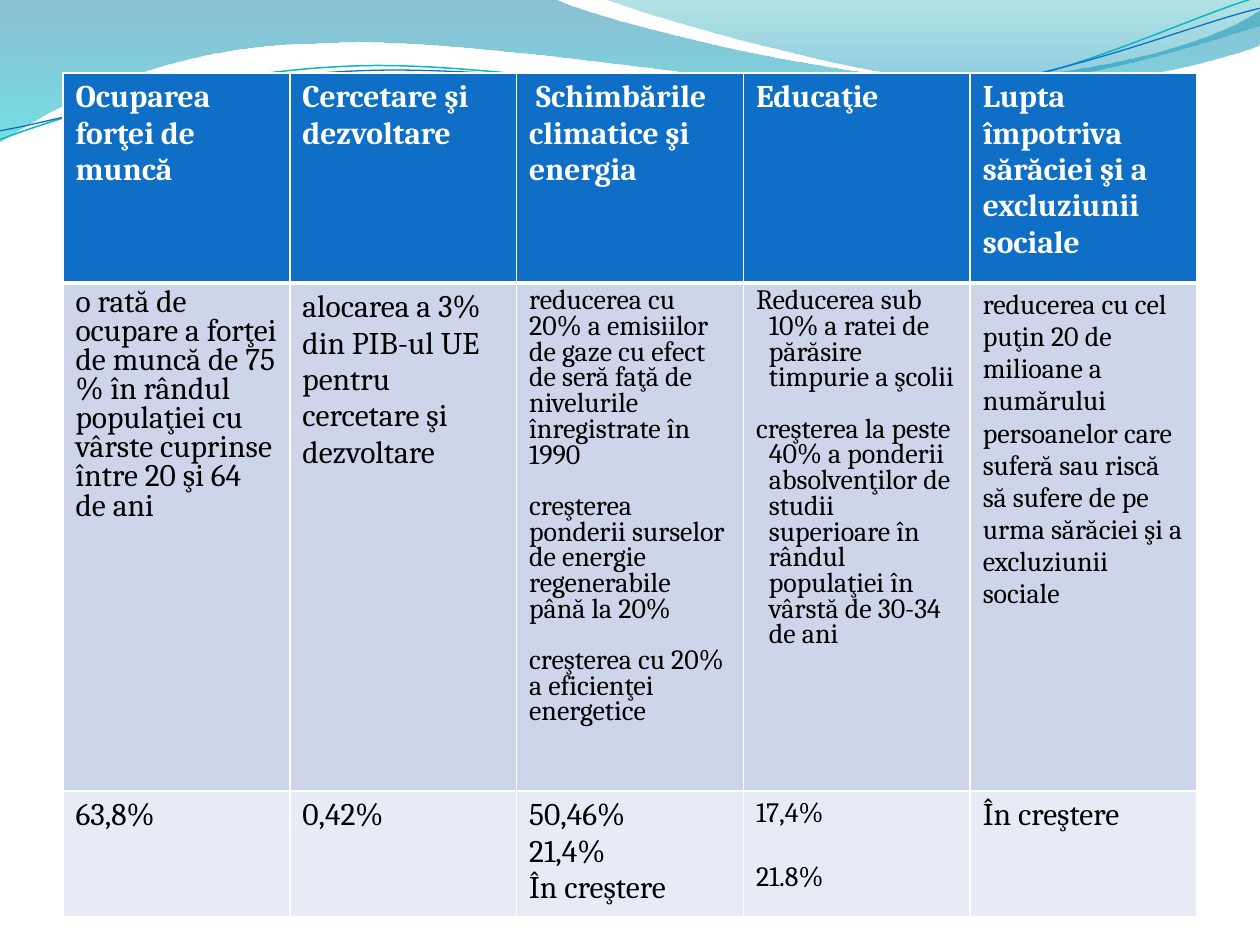
from pptx import Presentation
from pptx.dml.color import RGBColor
from pptx.oxml import parse_xml
from pptx.oxml.ns import nsdecls, qn
from pptx.util import Pt

PX = 914400 / 126
FONT = "Cambria"
WHITE, BLACK, BLUE = "FFFFFF", "000000", "0F6FC6"


def rgb(color):
    return RGBColor.from_string(color)


def write_text(cell, text, size=18, color=BLACK, bold=False, line_spacing=1.0, gap=0, hanging=0):
    """Fill a cell, one paragraph per line of text, gap points apart."""
    frame = cell.text_frame
    frame.word_wrap = True
    for index, line in enumerate(text.split("\n")):
        paragraph = frame.add_paragraph() if index else frame.paragraphs[0]
        paragraph.line_spacing = line_spacing
        if index:
            paragraph.space_before = Pt(gap)
        if hanging:
            properties = paragraph._p.get_or_add_pPr()
            properties.set("marL", str(round(hanging * PX)))
            properties.set("indent", str(round(-hanging * PX)))
        run = paragraph.add_run()
        run.text = line
        run.font.name, run.font.size, run.font.bold = FONT, Pt(size), bold
        run.font.color.rgb = rgb(color)


presentation = Presentation()
presentation.slide_width = round(1260 * PX)
presentation.slide_height = round(945 * PX)
slide = presentation.slides.add_slide(presentation.slide_layouts[6])

# Wave outlines: a segment is one point (straight) or three (Bézier curve)
wide_wave = [
    [(0, -1)], [(554, -1)],
    [(600, 21), (837, 79), (955, 79)], [(1075, 79), (1207, 47), (1260, 11)],
    [(1261, 45)],
    [(1239, 55), (1096, 96), (940, 95)], [(784, 95), (481, 35), (324, 43)],
    [(163, 44), (58, 105), (-1, 142)],
]
right_wave = [
    [(604, -1)],
    [(641, 14), (859, 78), (969, 82)], [(1079, 87), (1211, 40), (1260, 26)],
    [(1260, 0)],
]
teal_line = [
    [(-3, 110)],
    [(59, 90), (199, 52), (350, 53)], [(499, 53), (745, 118), (896, 114)],
    [(1048, 109), (1184, 45), (1260, 27)],
]
blue_line = [
    [(-2, 101)],
    [(57, 94), (207, 57), (357, 58)], [(509, 58), (750, 111), (902, 108)],
    [(1052, 104), (1187, 52), (1262, 38)],
]
LINE_ROTATION = 357.3
waves = [
    (wide_wave, [("0074A1", 45), ("00C6CF", 55)], None),
    (right_wave, [("00A1A9", 30), ("008BBF", 45)], None),
    (teal_line, None, ("0AB8BF", 0.85)),
    (blue_line, None, (BLUE, 0.75)),
]
for segments, gradient, outline in waves:
    start, *anchors = [segment[-1] for segment in segments]
    builder = slide.shapes.build_freeform(*start, scale=PX)
    builder.add_line_segments(anchors, close=gradient is not None)
    shape = builder.convert_to_shape()
    shape.shadow.inherit = False
    steps = list(shape._element.iter(qn("a:lnTo")))
    left, top = (min(segment[-1][axis] for segment in segments) for axis in (0, 1))
    path_width = int(next(shape._element.iter(qn("a:path"))).get("w"))
    unit = path_width / (max(segment[-1][0] for segment in segments) - left)
    for step, segment in zip(steps, segments[1:]):
        if len(segment) == 3:
            step.tag = qn("a:cubicBezTo")
        for position, (x, y) in enumerate(segment[:-1]):
            step.insert(position, parse_xml(
                f'<a:pt {nsdecls("a")} x="{round((x - left) * unit)}" y="{round((y - top) * unit)}"/>'))
    if gradient:
        shape.line.fill.background()
        shape.fill.gradient()
        shape.fill.gradient_angle = 270
        for stop, (color, opacity) in zip(shape.fill.gradient_stops, gradient):
            stop.color.rgb = rgb(color)
        for element, (color, opacity) in zip(shape._element.spPr.iter(qn("a:srgbClr")), gradient):
            element.append(parse_xml(f'<a:alpha {nsdecls("a")} val="{opacity * 1000}"/>'))
    else:
        shape.rotation = LINE_ROTATION
        shape.fill.background()
        shape.line.color.rgb = rgb(outline[0])
        shape.line.width = Pt(outline[1])

# Table of targets: text and its format for each cell
header = dict(color=WHITE, bold=True)
tight = dict(line_spacing=0.8)
small = dict(size=16)
small_tight = dict(size=16, line_spacing=0.8, gap=14.6)
rows = [
    (210, BLUE, [
        ("Ocuparea forţei de muncă", header),
        ("Cercetare şi dezvoltare", header),
        (" Schimbările climatice şi energia", header),
        ("Educaţie", header),
        ("Lupta împotriva sărăciei şi a excluziunii sociale", header),
    ]),
    (508, "CCD5EA", [
        ("o rată de ocupare a forţei de muncă de 75 % în rândul populaţiei cu vârste "
         "cuprinse între 20 şi 64 de ani", tight),
        ("alocarea a 3% din PIB-ul UE pentru cercetare şi dezvoltare", {}),
        ("reducerea cu 20% a emisiilor de gaze cu efect de seră faţă de nivelurile "
         "înregistrate în 1990\n"
         "creşterea ponderii surselor de energie regenerabile până la 20%\n"
         "creşterea cu 20% a eficienţei energetice", small_tight),
        ("Reducerea sub 10% a ratei de părăsire timpurie a şcolii\n"
         "creşterea la peste 40% a ponderii absolvenţilor de studii superioare în rândul "
         "populaţiei în vârstă de 30-34 de ani", dict(small_tight, hanging=13)),
        ("reducerea cu cel puţin 20 de milioane a numărului persoanelor care suferă sau "
         "riscă să sufere de pe urma sărăciei şi a excluziunii sociale", small),
    ]),
    (126, "E7EBF5", [
        ("63,8%", {}),
        ("0,42%", {}),
        ("50,46%\n21,4%\nÎn creştere", {}),
        ("17,4%\n21.8%", dict(small, gap=18.4)),
        ("În creştere", {}),
    ]),
]
table_height = sum(height for height, _, _ in rows)
table = slide.shapes.add_table(
    3, 5, round(63 * PX), round(73 * PX), round(1134 * PX), round(table_height * PX)).table
for row_index, (height, fill_color, cells) in enumerate(rows):
    table.rows[row_index].height = round(height * PX)
    borders = {"L": 1, "R": 1, "T": 3 if row_index == 1 else 1, "B": 3 if row_index == 0 else 1}
    for column_index, (text, text_format) in enumerate(cells):
        cell = table.cell(row_index, column_index)
        write_text(cell, text, **text_format)
        cell.fill.solid()
        cell.fill.fore_color.rgb = rgb(fill_color)
        for position, (side, width) in enumerate(borders.items()):
            cell._tc.get_or_add_tcPr().insert(position, parse_xml(
                f'<a:ln{side} {nsdecls("a")} w="{Pt(width)}"><a:solidFill>'
                f'<a:srgbClr val="{WHITE}"/></a:solidFill></a:ln{side}>'))

presentation.save("out.pptx")
